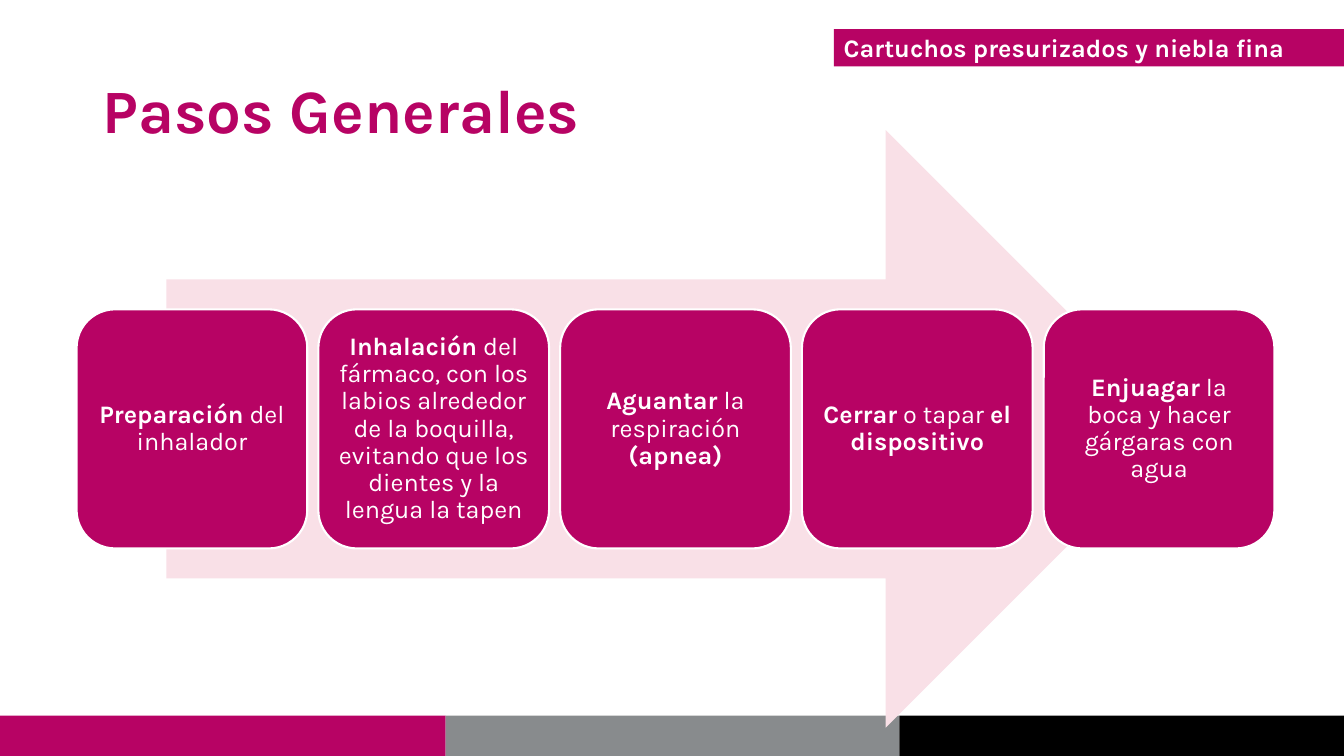
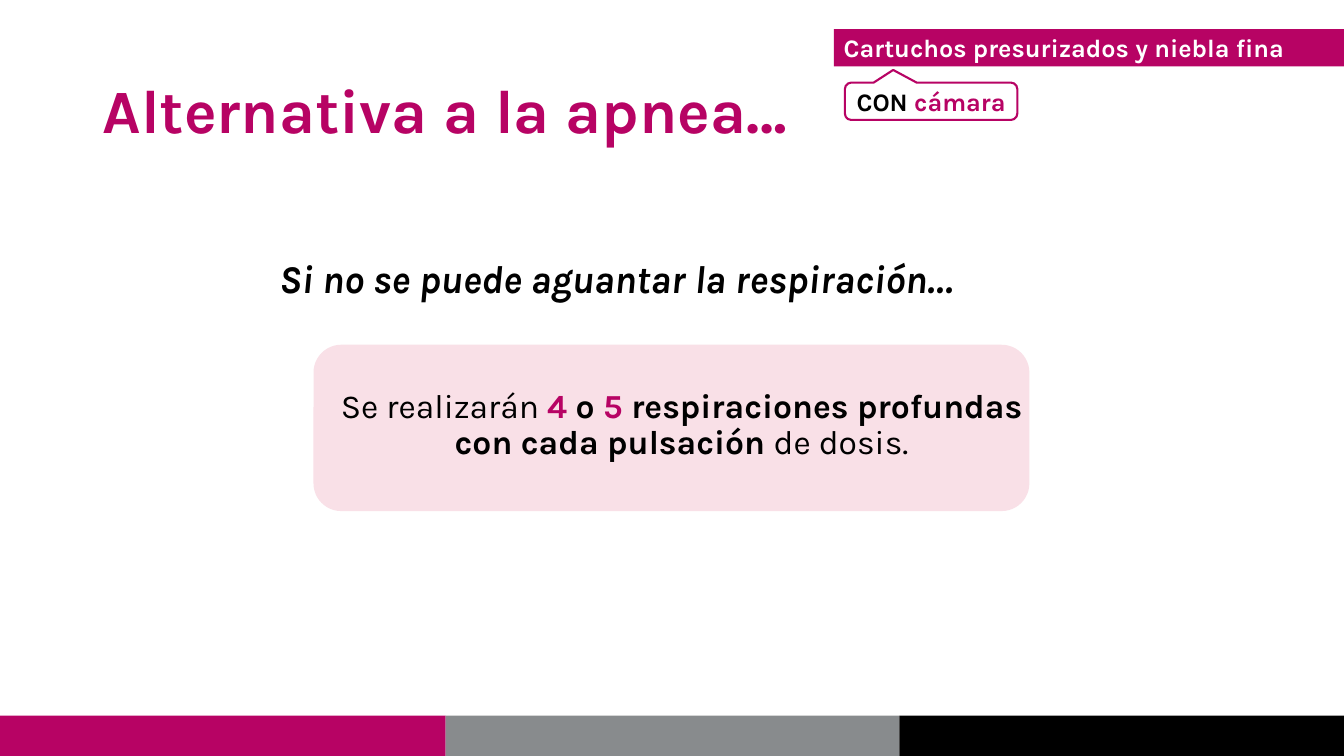
from pptx import Presentation
from pptx.dml.color import RGBColor
from pptx.enum.shapes import MSO_SHAPE as Shape
from pptx.enum.text import MSO_ANCHOR as Anchor, PP_ALIGN as Align
from pptx.util import Inches, Pt

COLORS = {
    "magenta": "B70364",
    "blush": "F9E0E7",
    "gray": "888B8D",
    "black": "000000",
    "white": "FFFFFF",
}
FONT = "Karla"
SLIDE_WIDTH, SLIDE_HEIGHT = 13.33, 7.5
TOPIC = "Cartuchos presurizados y niebla fina"
BOLD = {"bold": True}
PLAIN = {"bold": False}
ACCENT = {"bold": True, "color": "magenta"}
STEPS = [
    [("Preparación", BOLD), (" del inhalador", PLAIN)],
    [("Inhalación", BOLD),
     (" del fármaco, con los labios alrededor de la boquilla, "
      "evitando que los dientes y la lengua la tapen", PLAIN)],
    [("Aguantar", BOLD), (" la respiración ", PLAIN), ("(apnea)", BOLD)],
    [("Cerrar", BOLD), (" o tapar ", PLAIN), ("el dispositivo", BOLD)],
    [("Enjuagar", BOLD), (" la boca y hacer gárgaras con agua", PLAIN)],
]
BREATHS = [
    ("Se realizarán ", PLAIN), ("4 ", ACCENT), ("o", BOLD), (" 5 ", ACCENT),
    ("respiraciones profundas con cada pulsación ", BOLD), ("de dosis.", PLAIN),
]


def rgb(name):
    """Return the named palette colour."""
    return RGBColor.from_string(COLORS[name])


def write(box, spans, size, color="black", align=Align.LEFT,
          anchor=Anchor.MIDDLE, spacing=1.0, side=0.1, edge=0.05):
    """Write one paragraph of (text, format) spans into a box."""
    frame = box.text_frame
    settings = {
        "word_wrap": True, "vertical_anchor": anchor,
        "margin_left": Inches(side), "margin_right": Inches(side),
        "margin_top": Inches(edge), "margin_bottom": Inches(edge),
    }
    for name, value in settings.items():
        setattr(frame, name, value)
    para = frame.paragraphs[0]
    para.alignment, para.line_spacing = align, spacing
    for text, style in spans:
        span = para.add_run()
        span.text = text
        formats = {"name": FONT, "size": Pt(size), **style}
        span.font.color.rgb = rgb(formats.pop("color", color))
        for name, value in formats.items():
            setattr(span.font, name, value)


def add_text(page, area, spans, size, **options):
    """Add a text box filling the area."""
    write(page.shapes.add_textbox(*map(Inches, area)), spans, size, **options)


def add_block(page, kind, area, fill=None, line=None):
    """Add a flat shape filling the area, with optional fill and outline."""
    block = page.shapes.add_shape(kind, *map(Inches, area))
    block.shadow.inherit = False
    if fill:
        block.fill.solid()
        block.fill.fore_color.rgb = rgb(fill)
    else:
        block.fill.background()
    if line:
        block.line.color.rgb = rgb(line)
        block.line.width = Pt(1.5)
    else:
        block.line.fill.background()
    return block


def add_footer(page, top=7.1):
    """Draw the three-colour band along the bottom edge."""
    stops = [0, 4.42, 8.92, SLIDE_WIDTH]
    for left, right, fill in zip(stops, stops[1:], ["magenta", "gray", "black"]):
        area = (left, top, right - left, SLIDE_HEIGHT - top)
        add_block(page, Shape.RECTANGLE, area, fill)


def add_page(deck, title):
    """Add a slide with the shared footer, title and topic tag."""
    page = deck.slides.add_slide(deck.slide_layouts[6])
    add_footer(page)
    add_text(page, (0.92, 0.4, 11.5, 1.45), [(title, BOLD)], 44,
             color="magenta", spacing=0.9)
    tag_left = 8.27
    tag = add_block(page, Shape.RECTANGLE,
                    (tag_left, 0.29, SLIDE_WIDTH - tag_left, 0.37), "magenta")
    write(tag, [(TOPIC, BOLD)], 18, color="white")
    return page


def add_process(page, area, steps):
    """Draw a broad arrow with a centred row of step cards over it."""
    left, top, width, height = area
    arrow_width = width * 0.85
    add_block(page, Shape.RIGHT_ARROW,
              (left + (width - arrow_width) / 2, top, arrow_width, height), "blush")
    gap, card_height = 0.11, height * 0.4
    card_width = (width - gap * (len(steps) - 1)) / len(steps)
    card_top = top + (height - card_height) / 2
    for index, spans in enumerate(steps):
        card_left = left + index * (card_width + gap)
        card = add_block(page, Shape.ROUNDED_RECTANGLE,
                         (card_left, card_top, card_width, card_height),
                         "magenta", "white")
        write(card, spans, 18, color="white", align=Align.CENTER,
              spacing=0.9, side=0.07, edge=0.07)


def add_callout(page, area, spans):
    """Draw an outlined callout pointing up at the topic tag."""
    callout = add_block(page, Shape.ROUNDED_RECTANGULAR_CALLOUT, area,
                        line="magenta")
    for index, value in enumerate([-0.22, -0.84, 0.17]):
        callout.adjustments[index] = value
    write(callout, spans, 18, align=Align.CENTER, side=0.05)


def add_advice(page, area, lead, spans):
    """Place a lead sentence above a tinted panel with the advice."""
    left, top, width, height = area
    panel_top, panel_height = top + 0.89, height - 0.89
    add_block(page, Shape.ROUNDED_RECTANGLE,
              (left + 0.44, panel_top, width - 0.58, panel_height), "blush")
    add_text(page, (left, top, width, 0.6),
             [(lead, {"bold": True, "italic": True})], 28,
             anchor=Anchor.TOP, spacing=0.9)
    add_text(page, (left + 0.5, panel_top - 0.02, width - 0.5, panel_height),
             spans, 24, align=Align.CENTER, spacing=0.9)


def main():
    """Build and save the deck."""
    deck = Presentation()
    deck.slide_width, deck.slide_height = Inches(SLIDE_WIDTH), Inches(SLIDE_HEIGHT)
    page = add_page(deck, "Pasos Generales")
    add_process(page, (0.76, 1.29, 11.88, 5.93), STEPS)
    page = add_page(deck, "Alternativa a la apnea…")
    add_callout(page, (8.38, 0.82, 1.71, 0.37),
                [("CON ", BOLD), ("cámara", ACCENT)])
    add_advice(page, (2.67, 2.53, 7.68, 2.54),
               "Si no se puede aguantar la respiración…", BREATHS)
    deck.save("out.pptx")


if __name__ == "__main__":
    main()
